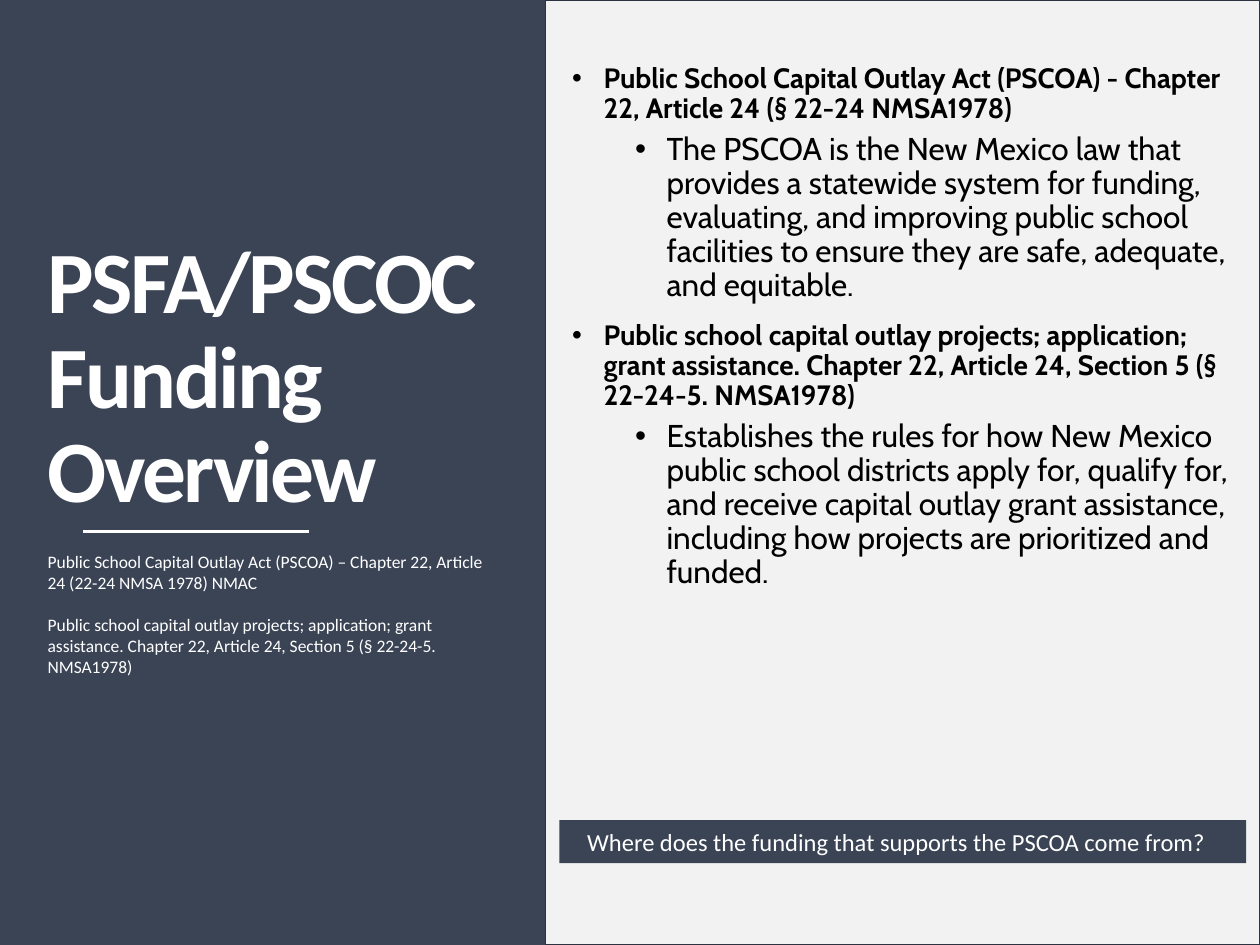
from lxml import etree
from pptx import Presentation
from pptx import util as u
from pptx.dml.color import RGBColor
from pptx.enum import shapes, text
from pptx.oxml import ns

WIDTH, HEIGHT = 10, 7.5
NAVY, PALE, EDGE, WHITE, BLACK = "3B4455", "F2F2F2", "2C323F", "FFFFFF", "000000"
SPLIT = 4.33
LEFT_EDGE = 0.28
COLUMN = (4.44, 5.45)

ACT = "Public School Capital Outlay Act (PSCOA) {} Chapter 22, Article 24 ({}"
PROJECTS = ("Public school capital outlay projects; application; grant assistance. "
            "Chapter 22, Article 24, Section 5 (§ 22-24-5. NMSA1978)")
CITATIONS = [ACT.format("–", "22-24 NMSA 1978) NMAC"), PROJECTS]
LAWS = [
    (ACT.format("-", "§ 22-24 NMSA1978)"),
     "The PSCOA is the New Mexico law that provides a statewide system for funding, "
     "evaluating, and improving public school facilities to ensure they are safe, "
     "adequate, and equitable."),
    (PROJECTS,
     "Establishes the rules for how New Mexico public school districts apply for, "
     "qualify for, and receive capital outlay grant assistance, including how "
     "projects are prioritized and funded."),
]


def color(value):
    return RGBColor.from_string(value)


def apply(target, formats):
    for key, value in formats.items():
        setattr(target, key, value)


def inches(*lengths):
    return [u.Inches(length) for length in lengths]


def place(target, left, top, width, height):
    apply(target, dict(zip(("left", "top", "width", "height"),
                           inches(left, top, width, height))))


def write(paragraph, words, size, ink, face="Calibri", bold=False, **layout):
    paragraph.text = words
    apply(paragraph, layout)
    run = paragraph.runs[0]
    apply(run.font, {"name": face, "size": u.Pt(size), "bold": bold})
    run.font.color.rgb = color(ink)
    return run


def paragraph_at(frame, index):
    return frame.add_paragraph() if index else frame.paragraphs[0]


def add_bullet(paragraph, indent):
    properties = paragraph._p.get_or_add_pPr()
    properties.set("marL", str(u.Inches(indent)))
    properties.set("indent", str(u.Inches(-0.25)))
    font = etree.SubElement(properties, ns.qn("a:buFont"))
    font.set("typeface", "Arial")
    mark = etree.SubElement(properties, ns.qn("a:buChar"))
    mark.set("char", "•")


def add_block(slide, box, fill, edge=None):
    block = slide.shapes.add_shape(shapes.MSO_SHAPE.RECTANGLE, *inches(*box))
    block.shadow.inherit = False
    block.fill.solid()
    block.fill.fore_color.rgb = color(fill)
    if edge:
        block.line.color.rgb = color(edge)
        block.line.width = u.Pt(1)
    else:
        block.line.fill.background()
    return block


def add_rule(slide, start, end, height):
    rule = slide.shapes.add_connector(
        shapes.MSO_CONNECTOR.STRAIGHT, *inches(start, height, end, height))
    rule.line.color.rgb = color(WHITE)
    rule.line.width = u.Pt(2)
    etree.SubElement(rule._element.spPr, ns.qn("a:effectLst"))


def fill_title(title):
    place(title, LEFT_EDGE, 1.83, 3.96, 2.36)
    apply(title.text_frame, {"vertical_anchor": text.MSO_ANCHOR.BOTTOM,
                             "word_wrap": True,
                             "auto_size": text.MSO_AUTO_SIZE.NONE})
    heading = write(title.text_frame.paragraphs[0], "PSFA/PSCOC Funding Overview",
                    50, WHITE, bold=True, alignment=text.PP_ALIGN.LEFT,
                    line_spacing=0.9)
    heading._r.get_or_add_rPr().set("spc", "-150")


def fill_laws(body):
    left, width = COLUMN
    place(body, left, 0.46, width, 6.71)
    frame = body.text_frame
    apply(frame, {"word_wrap": True, "auto_size": text.MSO_AUTO_SIZE.NONE,
                  "vertical_anchor": text.MSO_ANCHOR.TOP})
    entries = [(level, words) for law in LAWS for level, words in enumerate(law)]
    for index, (level, words) in enumerate(entries):
        paragraph = paragraph_at(frame, index)
        before = (5 if level else 10) if index else 0
        write(paragraph, words, 18 if level else 16, BLACK, "Cabin", not level,
              level=level, line_spacing=0.9, space_before=u.Pt(before),
              alignment=text.PP_ALIGN.LEFT)
        add_bullet(paragraph, 0.75 if level else 0.25)


def add_citations(slide):
    frame = slide.shapes.add_textbox(*inches(LEFT_EDGE, 4.32, 3.76, 1.28)).text_frame
    frame.word_wrap = True
    for index, words in enumerate(CITATIONS):
        write(paragraph_at(frame, index), words, 10, WHITE,
              space_before=u.Pt(12 if index else 0))


def add_question(slide):
    left, width = COLUMN
    banner = add_block(slide, (left, 6.51, width, 0.34), NAVY)
    apply(banner.text_frame, {"word_wrap": True, "margin_right": u.Inches(0.2),
                              "vertical_anchor": text.MSO_ANCHOR.MIDDLE})
    write(banner.text_frame.paragraphs[0],
          "Where does the funding that supports the PSCOA come from?",
          14, WHITE, alignment=text.PP_ALIGN.CENTER)


def main():
    deck = Presentation()
    deck.slide_width, deck.slide_height = inches(WIDTH, HEIGHT)
    slide = deck.slides.add_slide(deck.slide_layouts[1])
    slide.background.fill.solid()
    slide.background.fill.fore_color.rgb = color(NAVY)

    title, body = slide.placeholders
    panel = add_block(slide, (SPLIT, 0, WIDTH - SPLIT, HEIGHT), PALE, EDGE)
    title.element.addprevious(panel.element)
    fill_title(title)
    fill_laws(body)
    add_rule(slide, 2.45, 0.66, 4.22)
    add_citations(slide)
    add_question(slide)
    deck.save("out.pptx")


if __name__ == "__main__":
    main()
